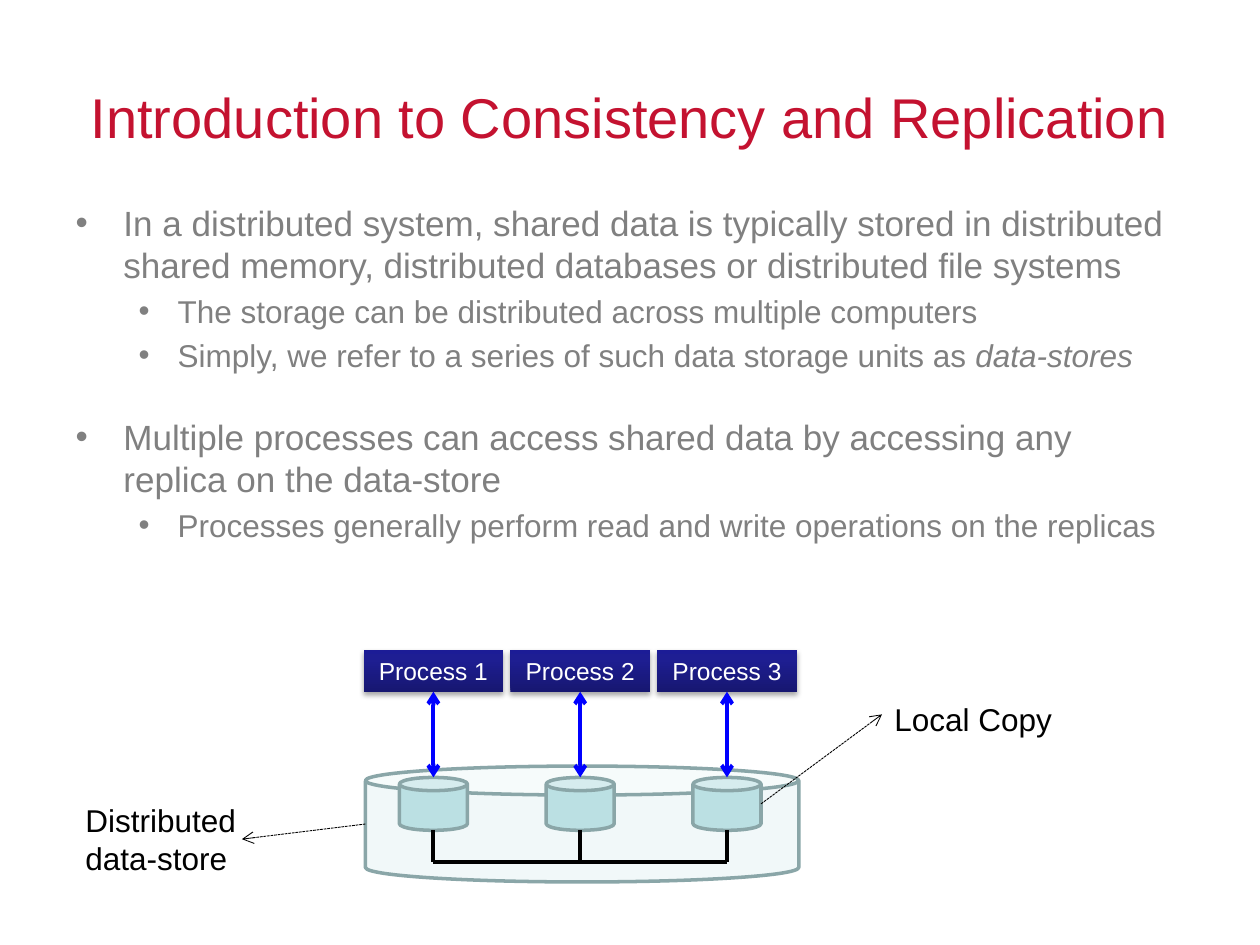
from lxml import etree
from pptx import Presentation, util as u
from pptx.dml.color import RGBColor
from pptx.enum import dml, shapes, text
from pptx.oxml import ns

Inches, Pt = u.Inches, u.Pt
FONT = "Arial"
BULLETS = [
    (0, 0, [("In a distributed system, shared data is typically stored in distributed "
             "shared memory, distributed databases or distributed file systems", False)]),
    (1, 3.6, [("The storage can be distributed across multiple computers", False)]),
    (1, 3.6, [("Simply, we refer to a series of such data storage units as ", False),
              ("data-stores", True)]),
    (0, 24, [("Multiple processes can access shared data by accessing any "
              "replica on the data-store", False)]),
    (1, 3.6, [("Processes generally perform read and write operations on the replicas", False)]),
]
LEVELS = [(20, 0.38, -0.38), (18, 0.81, -0.31)]


def rgb(value):
    return RGBColor.from_string(value)


def add_element(parent, tag, **attributes):
    return etree.SubElement(parent, ns.qn(tag), attributes)


def style_font(paragraph, size, color):
    paragraph.font.name = FONT
    paragraph.font.size = Pt(size)
    paragraph.font.color.rgb = rgb(color)


def place(shape, left, top, width, height):
    shape.left, shape.top = Inches(left), Inches(top)
    shape.width, shape.height = Inches(width), Inches(height)


def fill_title(title, box):
    place(title, *box)
    frame = title.text_frame
    frame.text = "Introduction to Consistency and Replication"
    frame.vertical_anchor = text.MSO_ANCHOR.MIDDLE
    frame.auto_size = text.MSO_AUTO_SIZE.NONE
    paragraph = frame.paragraphs[0]
    paragraph.alignment = text.PP_ALIGN.CENTER
    style_font(paragraph, 32, "C41230")


def fill_body(body, box):
    place(body, *box)
    frame = body.text_frame
    frame.auto_size = text.MSO_AUTO_SIZE.NONE
    for index, (level, space, runs) in enumerate(BULLETS):
        paragraph = frame.add_paragraph() if index else frame.paragraphs[0]
        size, margin, indent = LEVELS[level]
        paragraph.level = level
        paragraph.space_before = Pt(space)
        properties = paragraph._p.get_or_add_pPr()
        properties.set("marL", str(Inches(margin)))
        properties.set("indent", str(Inches(indent)))
        add_element(properties, "a:buFont", typeface=FONT)
        add_element(properties, "a:buChar", char="•")
        style_font(paragraph, size, "808080")
        for words, italic in runs:
            run = paragraph.add_run()
            run.text = words
            if italic:
                run.font.italic = True


def add_line(slide, start, end, color, width, head=False, tail=False, dashed=False):
    line = slide.shapes.add_connector(
        shapes.MSO_CONNECTOR.STRAIGHT, *(Inches(value) for value in (*start, *end)))
    line.line.color.rgb = rgb(color)
    line.line.width = Pt(width)
    if dashed:
        line.line.dash_style = dml.MSO_LINE.SQUARE_DOT
    outline = line.line._get_or_add_ln()
    for wanted, tag in ((head, "a:headEnd"), (tail, "a:tailEnd")):
        if wanted:
            add_element(outline, tag, type="arrow")
    add_element(line._element.spPr, "a:effectLst")
    return line


def add_can(slide, left, top, width, height, opacity=None):
    can = slide.shapes.add_shape(
        shapes.MSO_SHAPE.CAN, Inches(left), Inches(top), Inches(width), Inches(height))
    can.shadow.inherit = False
    can.fill.solid()
    can.fill.fore_color.rgb = rgb("BBE0E3")
    can.line.color.rgb = rgb("8AA6A8")
    can.line.width = Pt(2)
    if opacity:
        color = can._element.spPr.find(ns.qn("a:solidFill"))[0]
        add_element(color, "a:alpha", val=str(opacity * 1000))


def add_process(slide, label, left, top, width, height):
    process = slide.shapes.add_shape(
        shapes.MSO_SHAPE.RECTANGLE, Inches(left), Inches(top), Inches(width), Inches(height))
    process.line.fill.background()
    process.fill.gradient()
    process.fill.gradient_angle = 90
    properties = process._element.spPr
    stops = properties.find(ns.qn("a:gradFill")).find(ns.qn("a:gsLst"))
    for stop in list(stops):
        stops.remove(stop)
    for position, color in ((0, "171771"), (80, "1E1E93"), (100, "1C1C96")):
        stop = add_element(stops, "a:gs", pos=str(position * 1000))
        add_element(stop, "a:srgbClr", val=color)
    process.shadow.inherit = False
    shadow = add_element(properties.find(ns.qn("a:effectLst")), "a:outerShdw",
                         blurRad=str(Pt(3.1)), dist=str(Pt(1.8)), dir="5400000", rotWithShape="0")
    add_element(add_element(shadow, "a:srgbClr", val="000000"), "a:alpha", val="35000")
    frame = process.text_frame
    frame.text = label
    frame.vertical_anchor = text.MSO_ANCHOR.MIDDLE
    paragraph = frame.paragraphs[0]
    paragraph.alignment = text.PP_ALIGN.CENTER
    style_font(paragraph, 14, "FFFFFF")
    return process


def add_label(slide, words, box):
    label = slide.shapes.add_textbox(*(Inches(value) for value in box))
    label.text_frame.word_wrap = True
    label.text_frame.text = words
    style_font(label.text_frame.paragraphs[0], 18, "000000")


def add_data_store(slide, box):
    left, top, width, height = box
    store_top, store_height = top + 0.92, 0.92
    replica_top, replica_width, replica_height = top + 1.01, 0.54, 0.42
    replica_bottom, bus = replica_top + replica_height, top + 1.68
    process_width, process_height = 1.11, 0.33
    pitch = 2.33 / 2
    centers = [left + 0.54 + index * pitch for index in range(3)]

    add_can(slide, left, store_top, width, store_height, opacity=20)
    add_line(slide, (centers[0], bus), (centers[-1], bus), "000000", 2.25)
    for number, center in enumerate(centers, 1):
        add_can(slide, center - replica_width / 2, replica_top, replica_width, replica_height)
        add_line(slide, (center, replica_bottom), (center, bus), "000000", 2.25)
        process = add_process(slide, f"Process {number}", center - process_width / 2, top,
                              process_width, process_height)
        access = add_line(slide, (center, top + process_height), (center, replica_top),
                          "0000FF", 2.25, head=True, tail=True)
        access.begin_connect(process, 2)

    replica_side = (centers[-1] + replica_width / 2, replica_top + replica_height / 2)
    add_line(slide, replica_side, (left + 4.1, top + 0.51), "000000", 0.5, tail=True, dashed=True)
    add_label(slide, "Local Copy", (left + 4.1, top + 0.35, 1.5, 0.4))
    add_line(slide, (left, store_top + store_height / 2), (left - 0.98, top + 1.5),
             "000000", 0.5, tail=True, dashed=True)
    add_label(slide, "Distributed data-store", (left - 2.32, top + 1.15, 1.5, 0.71))


def main():
    presentation = Presentation()
    presentation.slide_width, presentation.slide_height = Inches(10), Inches(7.5)
    slide = presentation.slides.add_slide(presentation.slide_layouts[1])
    fill_title(slide.shapes.title, (0.5, 0.3, 9, 1.25))
    fill_body(slide.placeholders[1], (0.5, 1.55, 9, 5.37))
    add_data_store(slide, (2.9, 5.16, 3.44, 1.84))
    presentation.save("out.pptx")


if __name__ == "__main__":
    main()
